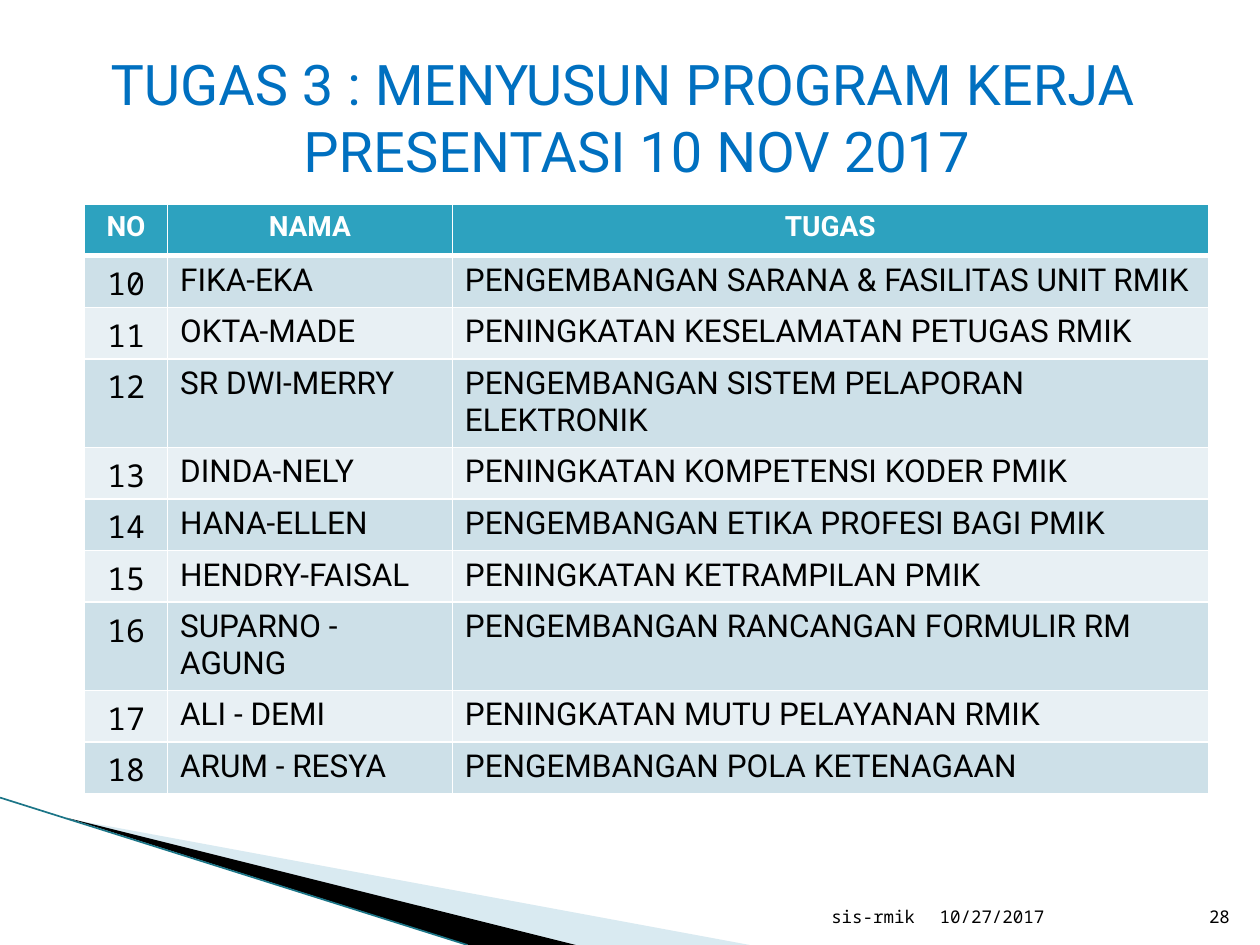
from lxml import etree
from pptx import Presentation
from pptx.dml.color import RGBColor
from pptx.enum.shapes import MSO_CONNECTOR
from pptx.enum.text import MSO_ANCHOR, PP_ALIGN
from pptx.oxml.ns import qn
from pptx.util import Inches, Pt

LEFT, CENTER, RIGHT = PP_ALIGN.LEFT, PP_ALIGN.CENTER, PP_ALIGN.RIGHT
MIDDLE, BOTTOM = MSO_ANCHOR.MIDDLE, MSO_ANCHOR.BOTTOM
STRAIGHT = MSO_CONNECTOR.STRAIGHT

BLACK = RGBColor(0x00, 0x00, 0x00)
WHITE = RGBColor(0xFF, 0xFF, 0xFF)
BLUE = RGBColor(0x00, 0x70, 0xC0)
TEAL = RGBColor(0x2D, 0xA2, 0xBF)
DARK_TEAL = RGBColor(0x1B, 0x75, 0x87)
PALE_BLUE = RGBColor(0xA0, 0xCB, 0xDC)
BAND_DARK = RGBColor(0xCD, 0xE0, 0xE8)
BAND_LIGHT = RGBColor(0xE8, 0xF0, 0xF4)

SANS = "Roboto"
MONO = "Noto Sans Mono"

HEADINGS = ("NO", "NAMA", "TUGAS")
FIRST_NUMBER = 10
TASKS = [
    ("FIKA-EKA", "PENGEMBANGAN SARANA & FASILITAS UNIT RMIK"),
    ("OKTA-MADE", "PENINGKATAN KESELAMATAN PETUGAS RMIK"),
    ("SR DWI-MERRY", "PENGEMBANGAN SISTEM PELAPORAN ELEKTRONIK"),
    ("DINDA-NELY", "PENINGKATAN KOMPETENSI KODER PMIK"),
    ("HANA-ELLEN", "PENGEMBANGAN ETIKA PROFESI BAGI PMIK"),
    ("HENDRY-FAISAL", "PENINGKATAN KETRAMPILAN PMIK"),
    ("SUPARNO - AGUNG", "PENGEMBANGAN RANCANGAN FORMULIR RM"),
    ("ALI - DEMI", "PENINGKATAN MUTU PELAYANAN RMIK"),
    ("ARUM - RESYA", "PENGEMBANGAN POLA KETENAGAAN"),
]


class SlideBuilder:
    def __init__(self, page):
        self.page = page

    def style(self, frame, font, size, color, align, bold=False):
        for para in frame.paragraphs:
            para.alignment = align
            for span in para.runs:
                span.font.name = font
                span.font.size = Pt(size)
                span.font.color.rgb = color
                span.font.bold = bold

    def text(self, words, left, top, width, height, font, size, color, align, anchor):
        box = self.page.shapes.add_textbox(
            Inches(left), Inches(top), Inches(width), Inches(height))
        frame = box.text_frame
        frame.word_wrap = True
        frame.vertical_anchor = anchor
        frame.text = words
        self.style(frame, font, size, color, align)

    def polygon(self, points, color, opacity=100):
        corners = [(Inches(x), Inches(y)) for x, y in points]
        builder = self.page.shapes.build_freeform(*corners[0])
        builder.add_line_segments(corners[1:], close=True)
        shape = builder.convert_to_shape()
        shape.shadow.inherit = False
        shape.fill.solid()
        shape.fill.fore_color.rgb = color
        shape.line.fill.background()
        if opacity < 100:
            fill_color = shape.fill._xPr.find(".//" + qn("a:srgbClr"))
            etree.SubElement(fill_color, qn("a:alpha"), val=str(opacity * 1000))

    def line(self, start, end, color, width):
        connector = self.page.shapes.add_connector(
            STRAIGHT, *(Inches(value) for value in start + end))
        connector.line.color.rgb = color
        connector.line.width = Pt(width)
        etree.SubElement(connector._element.spPr, qn("a:effectLst"))

    def borders(self, cell, color, top, bottom):
        properties = cell._tc.get_or_add_tcPr()
        for side, width in (("L", 1), ("R", 1), ("T", top), ("B", bottom)):
            edge = etree.SubElement(properties, qn("a:ln" + side), w=str(Pt(width)))
            fill = etree.SubElement(edge, qn("a:solidFill"))
            etree.SubElement(fill, qn("a:srgbClr"), val=str(color))

    def table(self, rows, left, top, column_widths, row_height):
        frame = self.page.shapes.add_table(
            len(rows), len(column_widths), Inches(left), Inches(top),
            Inches(sum(column_widths)), Inches(row_height * len(rows)))
        table = frame.table
        for column, width in zip(table.columns, column_widths):
            column.width = Inches(width)
        for row_index, values in enumerate(rows):
            table.rows[row_index].height = Inches(row_height)
            header = row_index == 0
            band = BAND_DARK if row_index % 2 else BAND_LIGHT
            for column_index, value in enumerate(values):
                cell = table.cell(row_index, column_index)
                self.borders(cell, WHITE, top=3 if row_index == 1 else 1,
                             bottom=3 if header else 1)
                cell.fill.solid()
                cell.fill.fore_color.rgb = TEAL if header else band
                cell.text_frame.text = value
                if header:
                    self.style(cell.text_frame, SANS, 16, WHITE, CENTER, bold=True)
                elif column_index == 0:
                    self.style(cell.text_frame, MONO, 18, BLACK, CENTER)
                else:
                    self.style(cell.text_frame, SANS, 18, BLACK, LEFT)


def main():
    deck = Presentation()
    deck.slide_width, deck.slide_height = Inches(10), Inches(7.5)
    slide = SlideBuilder(deck.slides.add_slide(deck.slide_layouts[6]))

    # Corner decoration
    slide.polygon([(0.55, 6.5), (5.95, 7.5), (4.56, 7.5)], PALE_BLUE, opacity=40)
    slide.polygon([(0.53, 6.49), (4.57, 7.5), (3.72, 7.5)], BLACK)
    slide.line((0, 6.33), (3.71, 7.5), DARK_TEAL, 0.95)

    # Title
    slide.text("TUGAS 3 : MENYUSUN PROGRAM KERJA \v PRESENTASI 10 NOV 2017",
               0.5, 0.3, 9, 1.25, SANS, 32, BLUE, CENTER, MIDDLE)

    # Footer
    for words, left, width, align in (
            ("10/27/2017", 7.36, 2.1, LEFT),
            ("sis-rmik", 4.79, 2.57, RIGHT),
            ("28", 9.46, 0.4, RIGHT)):
        slide.text(words, left, 7.01, width, 0.4, MONO, 10, BLACK, align, BOTTOM)

    # Task table
    rows = [HEADINGS] + [
        (str(number), *task) for number, task in enumerate(TASKS, FIRST_NUMBER)]
    slide.table(rows, 0.67, 1.62, (0.66, 2.26, 6), 0.41)

    deck.save("out.pptx")


if __name__ == "__main__":
    main()
